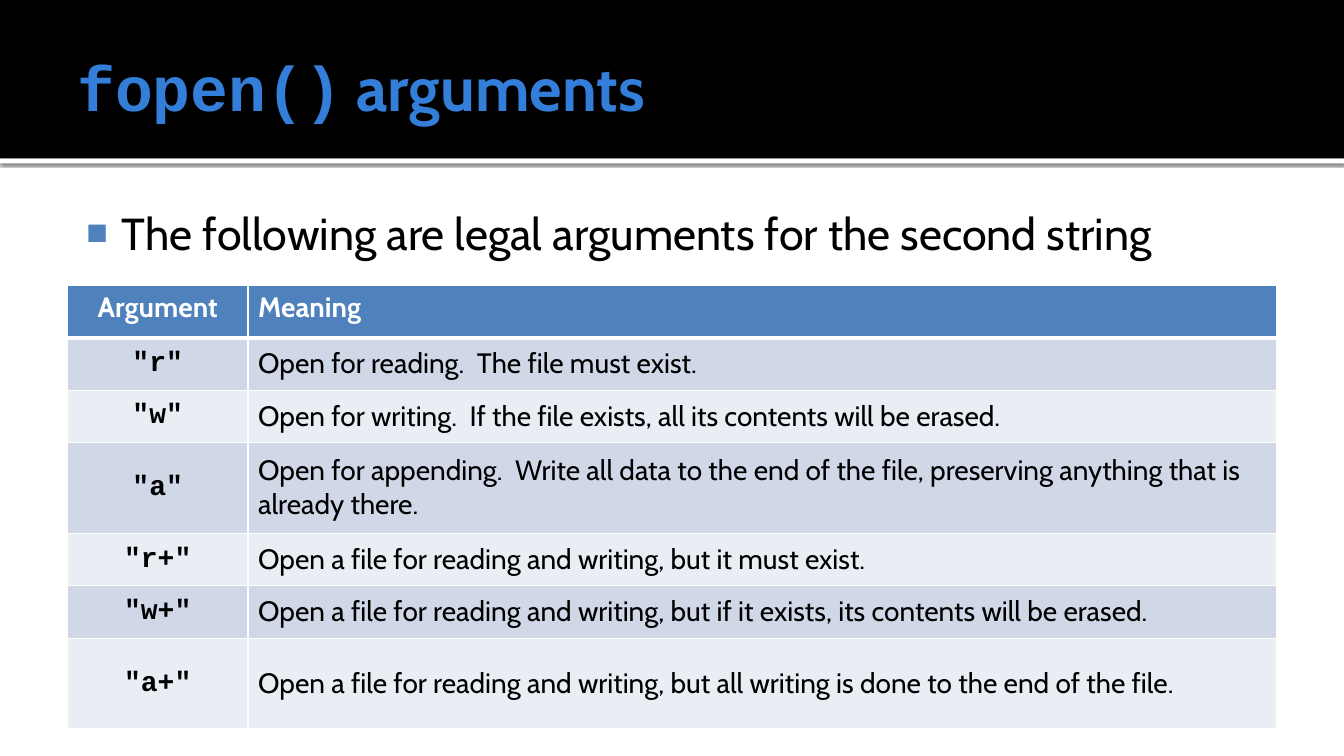
from lxml.etree import SubElement
from pptx import Presentation
from pptx.dml.color import RGBColor
from pptx.enum.shapes import MSO_SHAPE
from pptx.enum.text import MSO_ANCHOR, PP_ALIGN
from pptx.oxml import parse_xml
from pptx.oxml.ns import nsdecls, qn
from pptx.util import Cm, Pt

COLORS = {
    "black": "000000",
    "white": "FFFFFF",
    "title": "337ED9",
    "accent": "4F81BD",
    "band_dark": "D0D8E8",
    "band_light": "E9EDF4",
}
SANS, MONO = "Cabin", "Courier New"
SLIDE_W, SLIDE_H = 33.87, 19.05
MARGIN, CONTENT_W = 1.7, 30.48
BANNER_H = 3.99
ROW_H, TALL_ROW_H = 1.32, 2.29

HEADER = ("Argument", "Meaning")
MODES = [
    ('"r"', "Open for reading.  The file must exist.", ROW_H),
    ('"w"', "Open for writing.  If the file exists, all its contents will be erased.", ROW_H),
    ('"a"', "Open for appending.  Write all data to the end of the file, "
            "preserving anything that is already there.", TALL_ROW_H),
    ('"r+"', "Open a file for reading and writing, but it must exist.", ROW_H),
    ('"w+"', "Open a file for reading and writing, but if it exists, "
             "its contents will be erased.", ROW_H),
    ('"a+"', "Open a file for reading and writing, but all writing is done "
             "to the end of the file.", TALL_ROW_H),
]


def rgb(name):
    return RGBColor.from_string(COLORS[name])


def add_text(p, text, size=20, font=SANS, color="black", bold=False, align=None):
    r = p.add_run()
    r.text = text
    r.font.size = Pt(size)
    r.font.name = font
    r.font.bold = bold
    r.font.color.rgb = rgb(color)
    if align is not None:
        p.alignment = align


class SlideBuilder:
    def __init__(self, slide):
        self.s = slide

    def bar(self, top, height, color, shadow=False):
        sp = self.s.shapes.add_shape(
            MSO_SHAPE.RECTANGLE, 0, Cm(top), Cm(SLIDE_W), Cm(height))
        sp.fill.solid()
        sp.fill.fore_color.rgb = rgb(color)
        sp.line.fill.background()
        sp.shadow.inherit = False
        if shadow:
            effects = sp._element.spPr.find(qn("a:effectLst"))
            outer = SubElement(effects, qn("a:outerShdw"), blurRad=str(Pt(2.5)),
                               dist=str(Pt(0.8)), dir="5400000")
            clr = SubElement(outer, qn("a:srgbClr"), val=COLORS["black"])
            SubElement(clr, qn("a:alpha"), val="60000")

    def text_box(self, top, height, insets, anchor=MSO_ANCHOR.TOP):
        """Add a box of content width and return its first paragraph."""
        sp = self.s.shapes.add_textbox(
            Cm(MARGIN), Cm(top), Cm(CONTENT_W), Cm(height))
        tf = sp.text_frame
        tf.word_wrap = True
        tf.vertical_anchor = anchor
        tf.margin_left, tf.margin_top, tf.margin_right, tf.margin_bottom = map(Cm, insets)
        return tf.paragraphs[0]

    def bullet(self, p, char, color, percent, indent, hanging):
        pPr = p._p.get_or_add_pPr()
        pPr.set("marL", str(Cm(indent)))
        pPr.set("indent", str(-Cm(hanging)))
        clr = SubElement(pPr, qn("a:buClr"))
        SubElement(clr, qn("a:srgbClr"), val=COLORS[color])
        SubElement(pPr, qn("a:buSzPct"), val=str(percent * 1000))
        SubElement(pPr, qn("a:buFont"), typeface="Arial")
        SubElement(pPr, qn("a:buChar"), char=char)

    def cell(self, cell, text, fill, anchor=MSO_ANCHOR.MIDDLE, top=1, bottom=1, **fmt):
        """Fill one cell; top and bottom are border widths in points."""
        cell.fill.solid()
        cell.fill.fore_color.rgb = rgb(fill)
        cell.vertical_anchor = anchor
        add_text(cell.text_frame.paragraphs[0], text, **fmt)
        tcPr = cell._tc.get_or_add_tcPr()
        sides = (("lnL", 1), ("lnR", 1), ("lnT", top), ("lnB", bottom))
        for i, (side, width) in enumerate(sides):
            tcPr.insert(i, parse_xml(
                f'<a:{side} {nsdecls("a")} w="{Pt(width)}"><a:solidFill>'
                f'<a:srgbClr val="{COLORS["white"]}"/></a:solidFill></a:{side}>'))

    def mode_table(self, top, col_widths):
        heights = [ROW_H] + [height for _, _, height in MODES]
        table = self.s.shapes.add_table(
            len(heights), len(col_widths), Cm(MARGIN), Cm(top),
            Cm(sum(col_widths)), Cm(sum(heights))).table
        for col, width in zip(table.columns, col_widths):
            col.width = Cm(width)
        for row, height in zip(table.rows, heights):
            row.height = Cm(height)
        for c, (text, align) in enumerate(zip(HEADER, (PP_ALIGN.CENTER, PP_ALIGN.LEFT))):
            self.cell(table.cell(0, c), text, "accent", anchor=MSO_ANCHOR.TOP,
                      bottom=3, color="white", bold=True, align=align)
        for i, (mode, meaning, _) in enumerate(MODES, start=1):
            fill = "band_dark" if i % 2 else "band_light"
            top_border = 3 if i == 1 else 1
            self.cell(table.cell(i, 0), mode, fill, top=top_border,
                      font=MONO, bold=True, align=PP_ALIGN.CENTER)
            self.cell(table.cell(i, 1), meaning, fill, top=top_border)


def main():
    prs = Presentation()
    prs.slide_width, prs.slide_height = Cm(SLIDE_W), Cm(SLIDE_H)
    b = SlideBuilder(prs.slides.add_slide(prs.slide_layouts[6]))

    b.bar(BANNER_H, 0.13, "white", shadow=True)
    b.bar(0, BANNER_H, "black")

    p = b.text_box(0.43, 3.48, (0.25, 0.13, 0.13, 0.13), MSO_ANCHOR.MIDDLE)
    for text, font in (("fopen()", MONO), (" arguments", SANS)):
        add_text(p, text, size=45, font=font, color="title", bold=True)

    p = b.text_box(4.93, 2.9, (0.15, 0.25, 0.25, 0.13))
    b.bullet(p, "■", "accent", percent=80, indent=1.22, hanging=0.89)
    add_text(p, "The following are legal arguments for the second string", size=32)

    b.mode_table(7.19, (4.55, 25.93))
    prs.save("out.pptx")


if __name__ == "__main__":
    main()
